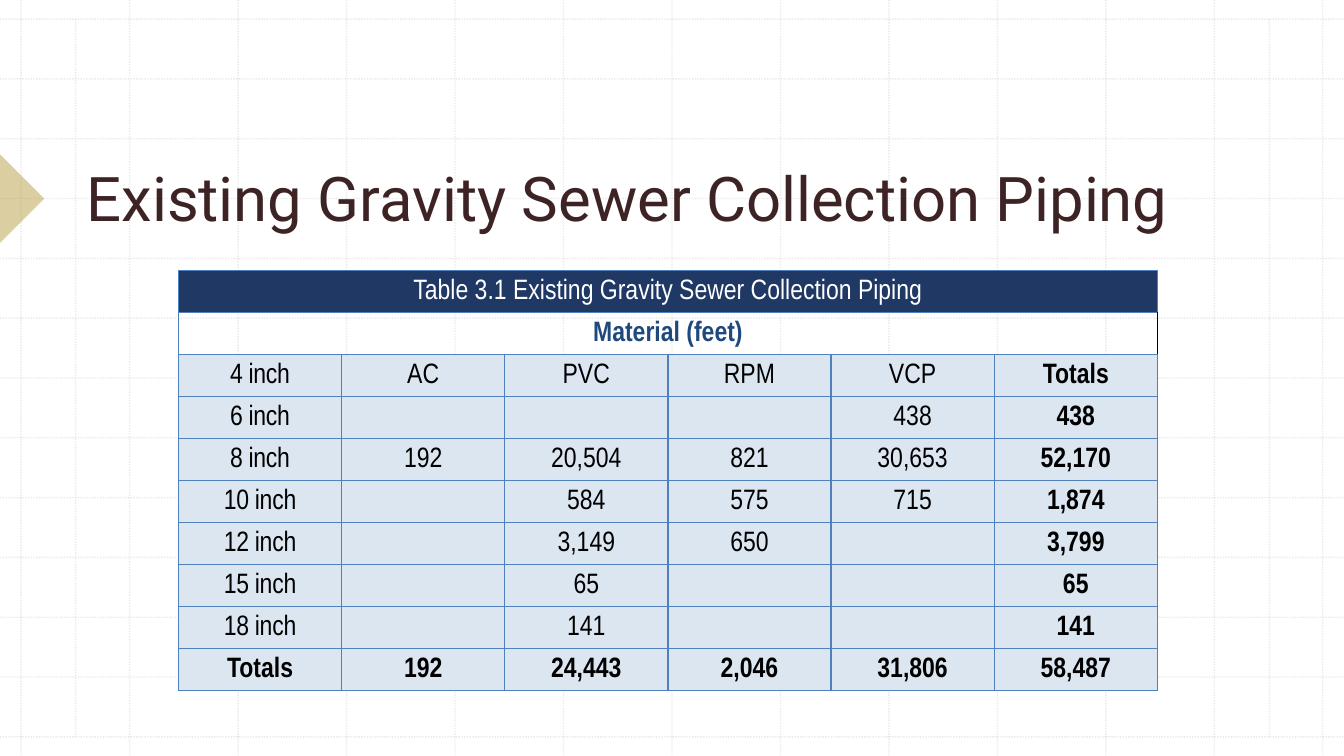
import pptx
import pptx.util
import pptx.dml.color
import pptx.enum.dml
import pptx.enum.shapes
import pptx.enum.text
import pptx.oxml
import pptx.oxml.ns

Inches = pptx.util.Inches
Pt = pptx.util.Pt
RGB = pptx.dml.color.RGBColor
Shape = pptx.enum.shapes.MSO_SHAPE
Anchor = pptx.enum.text.MSO_ANCHOR
Align = pptx.enum.text.PP_ALIGN
qn = pptx.oxml.ns.qn

TITLE = "Existing Gravity Sewer Collection Piping"
ROWS = [
    ("Table 3.1 Existing Gravity Sewer Collection Piping", "", "", "", "", ""),
    ("Material (feet)", "", "", "", "", ""),
    ("4 inch", "AC", "PVC", "RPM", "VCP", "Totals"),
    ("6 inch", "", "", "", "438", "438"),
    ("8 inch", "192", "20,504", "821", "30,653", "52,170"),
    ("10 inch", "", "584", "575", "715", "1,874"),
    ("12 inch", "", "3,149", "650", "", "3,799"),
    ("15 inch", "", "65", "", "", "65"),
    ("18 inch", "", "141", "", "", "141"),
    ("Totals", "192", "24,443", "2,046", "31,806", "58,487"),
]
GREY = RGB(0xBC, 0xBC, 0xBC)
GOLD = RGB(0xB9, 0x9E, 0x44)
BROWN = RGB(0x3D, 0x23, 0x24)
NAVY = RGB(0x1F, 0x38, 0x64)
BLUE = RGB(0x1F, 0x49, 0x7C)
PALE = RGB(0xDC, 0xE6, 0xF1)
EDGE = RGB(0x4F, 0x82, 0xBD)
WHITE = RGB(0xFF, 0xFF, 0xFF)
BLACK = RGB(0, 0, 0)
WIDE, HIGH = 13.33, 7.5


def fade(fill, share):
    tone = fill._xPr.find(qn("a:solidFill"))[0]
    pptx.oxml.ns.nsdecls("a")
    tone.append(pptx.oxml.parse_xml(
        f'<a:alpha {pptx.oxml.ns.nsdecls("a")} val="{share * 1000}"/>'))


def rule(slide, x1, y1, x2, y2):
    line = slide.shapes.add_connector(
        pptx.enum.shapes.MSO_CONNECTOR.STRAIGHT,
        Inches(x1), Inches(y1), Inches(x2), Inches(y2))
    line.line.color.rgb = GREY
    line.line.width = Pt(1)
    line.line.dash_style = pptx.enum.dml.MSO_LINE.ROUND_DOT
    fade(line.line.fill, 30)
    line._element.spPr.append(pptx.oxml.parse_xml(
        f'<a:effectLst {pptx.oxml.ns.nsdecls("a")}/>'))


def border(cell, side, color):
    cell._tc.get_or_add_tcPr().append(pptx.oxml.parse_xml(
        f'<a:ln{side} {pptx.oxml.ns.nsdecls("a")} w="12700"><a:solidFill>'
        f'<a:srgbClr val="{color}"/></a:solidFill></a:ln{side}>'))


def backdrop(slide):
    for i in range(13):
        x, y = 0.21 + i * 12.91 / 12, 0.19 + i * 7.12 / 12
        rule(slide, x, 0, x, HIGH)
        rule(slide, 0, y, WIDE, y)
    for x in (0.75, 12.59):
        rule(slide, x, 0.19, x, 7.31)
    mark = slide.shapes.add_shape(
        Shape.RIGHT_TRIANGLE, Inches(-0.31), Inches(1.66), Inches(0.62), Inches(0.62))
    mark.rotation = 225
    mark.shadow.inherit = False
    mark.fill.solid()
    mark.fill.fore_color.rgb = GOLD
    fade(mark.fill, 50)
    mark.line.fill.background()


def heading(slide):
    box = slide.shapes.add_textbox(Inches(0.76), Inches(0.79), Inches(11.29), Inches(1.58))
    frame = box.text_frame
    frame.word_wrap = True
    frame.vertical_anchor = Anchor.BOTTOM
    para = frame.paragraphs[0]
    para.text = TITLE
    para.font.size = Pt(44)
    para.font.name = "Roboto"
    para.font.color.rgb = BROWN


def write(cell, text, r, c):
    cell.vertical_anchor = Anchor.MIDDLE
    cell.margin_left = cell.margin_right = Inches(0.07)
    cell.margin_top = cell.margin_bottom = 0
    para = cell.text_frame.paragraphs[0]
    para.text = text
    para.alignment = Align.CENTER
    para.line_spacing = 1.07
    para.space_before = para.space_after = Pt(4)
    para.font.size = Pt(20)
    para.font.name = "Arial Narrow"
    para.font.bold = r in (1, len(ROWS) - 1) or c == 5
    para.font.color.rgb = {0: WHITE, 1: BLUE}.get(r, BLACK)
    if c == 0 and 1 < r < len(ROWS) - 1:
        para.runs[0]._r.get_or_add_rPr().set("spc", "-20")


def grid(slide):
    table = slide.shapes.add_table(
        len(ROWS), 6, Inches(1.77), Inches(2.68), Inches(9.71), Inches(4.17)).table
    table.first_row = table.horz_banding = False
    for r, row in enumerate(ROWS):
        for c, text in enumerate(row):
            cell = table.cell(r, c)
            for side in "LRTB":
                border(cell, side, BLACK if (r, side) == (1, "R") else EDGE)
            if r == 1:
                cell.fill.background()
            else:
                cell.fill.solid()
                cell.fill.fore_color.rgb = PALE if r else NAVY
            if text:
                write(cell, text, r, c)
    for r in (0, 1):
        table.cell(r, 0).merge(table.cell(r, 5))


def main():
    deck = pptx.Presentation()
    deck.slide_width, deck.slide_height = Inches(WIDE), Inches(HIGH)
    slide = deck.slides.add_slide(deck.slide_layouts[6])
    backdrop(slide)
    heading(slide)
    grid(slide)
    deck.save("out.pptx")


if __name__ == "__main__":
    main()
